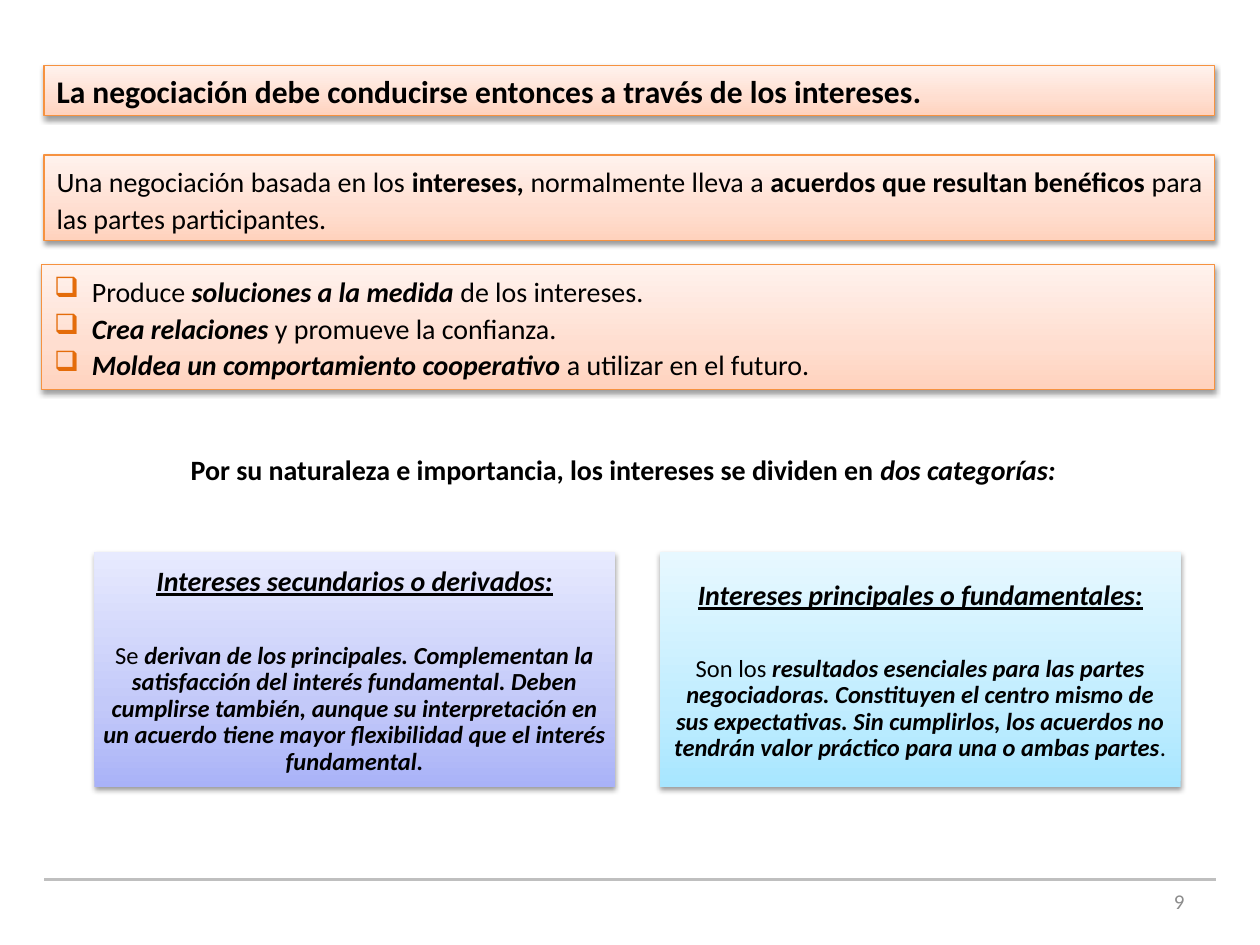
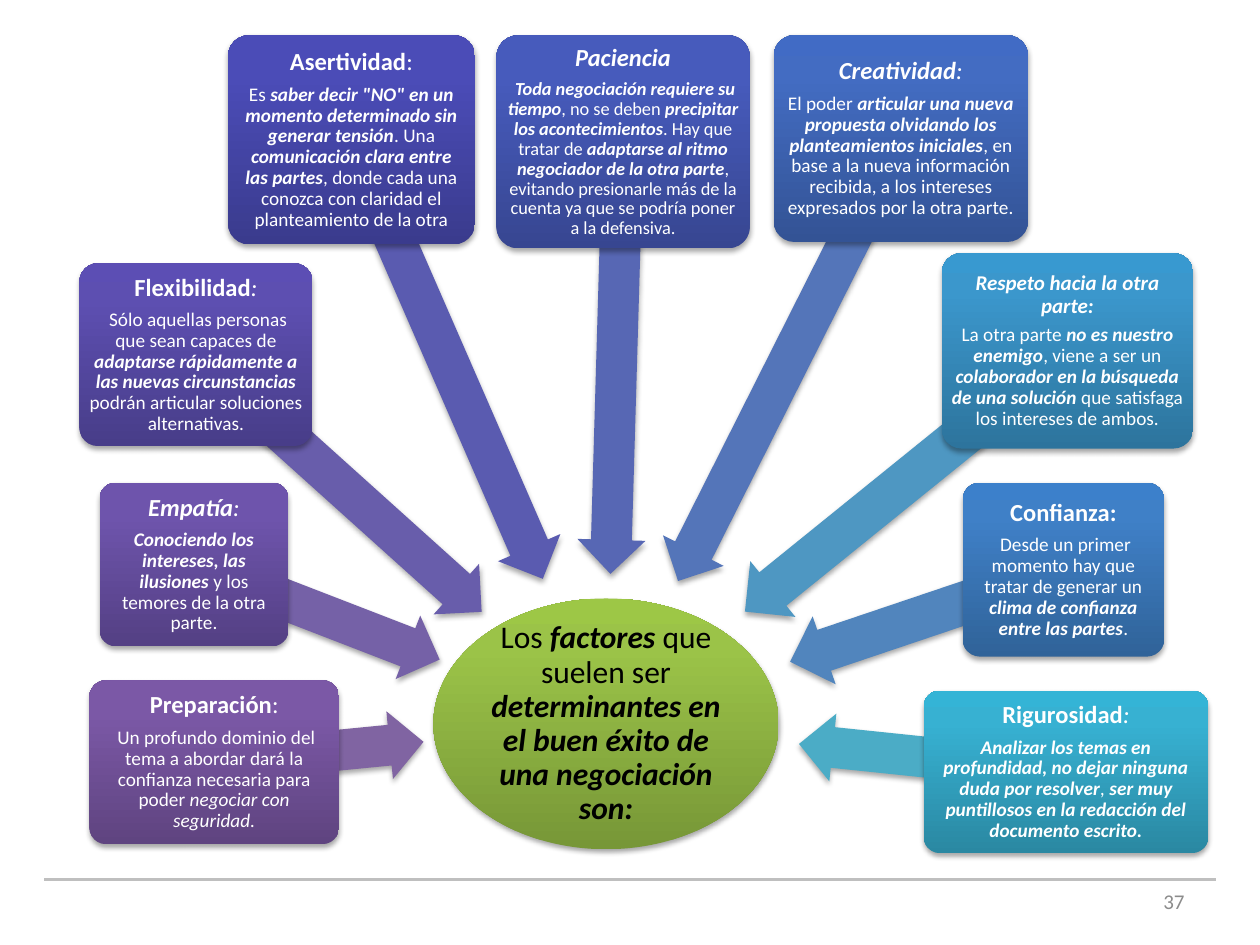
import math

import pptx
import pptx.dml.color
import pptx.enum.shapes
import pptx.enum.text
import pptx.oxml.ns
import pptx.util
from lxml import etree

Pt = pptx.util.Pt
SHAPES = pptx.enum.shapes.MSO_SHAPE
ALIGN = pptx.enum.text.PP_ALIGN
ANCHOR = pptx.enum.text.MSO_ANCHOR
qn = pptx.oxml.ns.qn

COLORS = {
    "text": "000000",
    "light text": "FFFFFF",
    "rule": "BFBFBF",
    "page number": "8C8C8C",
    "panel line": "F69240",
    "bullet": "E46C0A",
    "panel": "FFD2BD FFDED0 FFF2ED",
    "secondary": "A9B2F8 C3C9F9 E7EAFE",
    "principal": "A7E6FF C1EDFF E7F8FF",
    "hub": "779737 9BC348 9DC746",
    "preparation": "5F4480 7B58A6 7C57A8",
    "preparation arrow": "8064A2",
    "empathy": "544084 6E54AC 6D52AE",
    "empathy arrow": "7561A7",
    "flexibility": "483D89 5D4FB1 5C4EB4",
    "flexibility arrow": "685DAB",
    "assertiveness": "3A3B8D 4B4CB7 494BBA",
    "assertiveness arrow": "5A5BB0",
    "patience": "374691 475BBC 455ABF",
    "patience arrow": "5767B4",
    "creativity": "335395 436CC2 416BC5",
    "creativity arrow": "5475B9",
    "trust": "306399 3F80C7 3C80CB",
    "trust arrow": "5185BD",
    "respect": "2D749D 3B97CC 3899D0",
    "respect arrow": "4E97C2",
    "rigour": "2A88A2 37B1D2 34B4D6",
    "rigour arrow": "4BACC6",
}


class Painter:
    font = "Calibri"
    normal_margins = (7.2, 3.6)

    def __init__(self):
        self.deck = pptx.Presentation()
        self.deck.slide_width, self.deck.slide_height = Pt(720), Pt(540)
        self.page = None

    def color(self, name):
        return pptx.dml.color.RGBColor.from_string(COLORS[name])

    def new_page(self, number):
        self.page = self.deck.slides.add_slide(self.deck.slide_layouts[6])
        rule = self.page.shapes.add_connector(
            pptx.enum.shapes.MSO_CONNECTOR.STRAIGHT, Pt(25.2), Pt(502.6), Pt(694.8), Pt(502.6))
        rule.line.color.rgb = self.color("rule")
        rule.line.width = Pt(2)
        etree.SubElement(rule._element.spPr, qn("a:effectLst"))
        box = self.textbox((516.2, 500.4, 167.8, 28.8), anchor=ANCHOR.MIDDLE)
        self.paragraph(box, 12, [(number, "")], color="page number", align=ALIGN.RIGHT)

    def frame(self, box, margins, anchor):
        frame = box.text_frame
        frame.word_wrap = True
        frame.vertical_anchor = anchor
        frame.margin_left = frame.margin_right = Pt(margins[0])
        frame.margin_top = frame.margin_bottom = Pt(margins[1])

    def textbox(self, area, anchor=ANCHOR.TOP):
        box = self.page.shapes.add_textbox(*map(Pt, area))
        self.frame(box, self.normal_margins, anchor)
        return box

    def shape(self, kind, area, fill, middle_stop=80, shadow=(1.8, 35), line=None,
              margins=(2.3, 2.3), anchor=ANCHOR.MIDDLE):
        shape = self.page.shapes.add_shape(kind, *map(Pt, area))
        stops = COLORS[fill].split()
        if len(stops) == 1:
            shape.fill.solid()
            shape.fill.fore_color.rgb = self.color(fill)
        else:
            self.gradient(shape, stops, (0, middle_stop, 100))
        if line:
            shape.line.color.rgb = self.color(line)
            shape.line.width = Pt(0.75)
        else:
            shape.line.fill.background()
        self.shadow(shape, *shadow)
        self.frame(shape, margins, anchor)
        return shape

    def gradient(self, shape, stops, places):
        shape.fill.gradient()
        shape.fill.gradient_angle = 90
        stop_list = shape._element.spPr.find(".//" + qn("a:gsLst"))
        for stop in list(stop_list):
            stop_list.remove(stop)
        for value, place in zip(stops, places):
            stop = etree.SubElement(stop_list, qn("a:gs"), pos=str(place * 1000))
            etree.SubElement(stop, qn("a:srgbClr"), val=value)

    def shadow(self, shape, distance, opacity):
        shape.shadow.inherit = False
        effects = shape._element.spPr.find(qn("a:effectLst"))
        outer = etree.SubElement(effects, qn("a:outerShdw"), blurRad=str(Pt(3.1)),
                                 dist=str(Pt(distance)), dir="5400000", rotWithShape="0")
        tint = etree.SubElement(outer, qn("a:srgbClr"), val=COLORS["text"])
        etree.SubElement(tint, qn("a:alpha"), val=str(opacity * 1000))

    def paragraph(self, box, size, spans, color="text", align=ALIGN.CENTER,
                  spacing=None, after=None, bullet=None):
        frame = box.text_frame
        para = frame.paragraphs[0]
        if para.runs:
            para = frame.add_paragraph()
        para.alignment = align
        para.line_spacing = spacing
        if after:
            para.space_after = Pt(after)
        elif align == ALIGN.CENTER:
            self.relative_space_after(para)
        if bullet:
            self.bullet(para, bullet)
        for words, style in spans:
            span = para.add_run()
            span.text = words
            span.font.name = self.font
            span.font.size = Pt(size)
            span.font.color.rgb = self.color(color)
            span.font.bold = "b" in style
            span.font.italic = "i" in style
            span.font.underline = "u" in style

    def relative_space_after(self, para):
        para.space_after = Pt(0)
        space = para._p.pPr.find(qn("a:spcAft"))
        space.remove(space[0])
        etree.SubElement(space, qn("a:spcPct"), val="35000")

    def bullet(self, para, mark):
        properties = para._p.get_or_add_pPr()
        properties.set("marL", str(Pt(21.6)))
        properties.set("indent", str(-Pt(21.6)))
        tint = etree.SubElement(properties, qn("a:buClr"))
        etree.SubElement(tint, qn("a:srgbClr"), val=COLORS["bullet"])
        etree.SubElement(properties, qn("a:buChar"), char=mark)

    def panel(self, area, anchor=ANCHOR.TOP):
        return self.shape(SHAPES.RECTANGLE, area, "panel", 35, (1.6, 38), "panel line",
                          self.normal_margins, anchor)

    def card(self, left, fill, heading, spans):
        box = self.shape(SHAPES.RECTANGLE, (left, 315.4, 297.4, 134.6), fill, 35, (1.6, 38),
                         margins=(4.4, 4.4))
        self.paragraph(box, 16, [(heading, "biu")], after=26)
        self.paragraph(box, 14, spans, spacing=0.9)

    def arrow(self, area, hub, length, thickness, fill):
        left, top, width, height = area
        start_x, start_y = left + width / 2, top + height / 2
        angle = math.atan2(start_y - hub[1] - hub[3] / 2, start_x - hub[0] - hub[2] / 2)
        middle_x = start_x - length / 2 * math.cos(angle)
        middle_y = start_y - length / 2 * math.sin(angle)
        arrow = self.shape(SHAPES.LEFT_ARROW, (middle_x - length / 2, middle_y - thickness / 2,
                                               length, thickness), fill)
        arrow.adjustments[0], arrow.adjustments[1] = 0.6, 0.5
        arrow.rotation = math.degrees(angle) % 360

    def factor(self, area, fill, heading, spans, heading_size=14, body_size=11):
        box = self.shape(SHAPES.ROUNDED_RECTANGLE, area, fill)
        box.adjustments[0] = 0.1
        self.paragraph(box, heading_size, heading, "light text", spacing=0.9)
        self.paragraph(box, body_size, spans, "light text", spacing=0.9)


def interests_page(painter):
    painter.new_page("9")
    title = painter.panel((25.2, 37.4, 668.9, 28.8), ANCHOR.MIDDLE)
    painter.paragraph(title, 18, [
        ("La negociación debe conducirse entonces a través de los intereses", "b"),
        (".", "bi")], align=ALIGN.LEFT)
    lead = painter.panel((25.2, 88.6, 668.9, 49))
    painter.paragraph(lead, 16, [
        ("Una negociación basada en los ", ""), ("intereses,", "b"),
        (" normalmente lleva a ", ""), ("acuerdos que resultan benéficos", "b"),
        (" para las partes participantes.", "")], align=ALIGN.JUSTIFY, spacing=1.1)
    benefits = painter.panel((23.8, 151.2, 670.3, 71.3))
    for spans in (
        [("Produce ", ""), ("soluciones a la medida", "bi"), (" de los intereses.", "")],
        [("Crea relaciones", "bi"), (" y promueve la confianza.", "")],
        [("Moldea un comportamiento cooperativo", "bi"), (" a utilizar en el futuro.", "")],
    ):
        painter.paragraph(benefits, 16, spans, align=ALIGN.JUSTIFY, spacing=1.1, bullet="❑")
    division = painter.textbox((25.2, 254.9, 662, 26.6))
    painter.paragraph(division, 16, [
        ("Por su naturaleza e importancia, los intereses se dividen en ", "b"),
        ("dos categorías:", "bi")])
    painter.card(54, "secondary", "Intereses secundarios o derivados:", [
        ("Se ", ""),
        ("derivan de los principales. Complementan la satisfacción del interés fundamental. "
         "Deben cumplirse también, aunque su interpretación en un acuerdo tiene mayor "
         "flexibilidad que el interés fundamental.", "bi")])
    painter.card(377.3, "principal", "Intereses principales o fundamentales:", [
        ("Son los ", ""),
        ("resultados esenciales para las partes negociadoras. Constituyen el centro mismo de "
         "sus expectativas. Sin cumplirlos, los acuerdos no tendrán valor práctico para una o "
         "ambas partes", "bi"), (".", "i")])


def factors_page(painter):
    painter.new_page("37")
    hub = (247.7, 342, 197.3, 143.3)
    center = painter.shape(SHAPES.OVAL, hub, "hub", margins=(0.9, 0.9))
    painter.paragraph(center, 18, [
        ("Los ", ""), ("factores ", "bi"), ("que suelen ser ", ""),
        ("determinantes en el buen éxito de una negociación son:", "bi")], spacing=0.9)
    factors = [
        ("preparation", (51.1, 388.8, 142.6, 93.6), 120.2, 38.9,
         [("Preparación", "b"), (":", "")],
         [(" Un profundo dominio del tema a abordar dará la confianza necesaria para poder ", ""),
          ("negociar con seguridad.", "i")], {}),
        ("empathy", (56.9, 275.8, 108, 93.6), 150.5, 38.9,
         [("Empatía", "bi"), (":", "i")],
         [("Conociendo los intereses, las ilusiones", "bi"),
          (" y los temores de la otra parte.", "")], {}),
        ("flexibility", (45.4, 150.5, 133.2, 104.4), 219.6, 38.9,
         [("Flexibilidad", "b"), (":", "i")],
         [(" Sólo aquellas personas que sean capaces de ", ""),
          ("adaptarse rápidamente a las nuevas circunstancias", "bi"),
          (" podrán articular soluciones alternativas.", "")], {}),
        ("assertiveness", (130.3, 20.2, 141.1, 119.5), 273.6, 38.9,
         [("Asertividad", "b"), (":", "")],
         [("Es ", ""),
          ("saber decir \"NO\" en un momento determinado sin generar tensión", "bi"),
          (". Una ", ""), ("comunicación clara entre las partes", "bi"),
          (", donde cada una conozca con claridad el planteamiento de la otra", "")], {}),
        ("patience", (283.7, 20.2, 144.7, 121.7), 247, 38.9,
         [("Paciencia", "bi")],
         [(" Toda negociación requiere su tiempo", "bi"), (", no se deben ", ""),
          ("precipitar los acontecimientos", "bi"), (". Hay que tratar de ", ""),
          ("adaptarse al ritmo negociador de la otra parte", "bi"),
          (", evitando presionarle más de la cuenta ya que se podría poner a la defensiva.", "")],
         {"body_size": 10.5}),
        ("creativity", (442.1, 20.2, 145.4, 118.1), 283, 38.9,
         [("Creatividad", "bi"), (":", "i")],
         [("El poder ", ""),
          ("articular una nueva propuesta olvidando los planteamientos iniciales", "bi"),
          (", en base a la nueva información recibida, a los intereses expresados por la otra "
           "parte.", "")], {}),
        ("trust", (550.1, 275.8, 115.2, 99.4), 164.8, 41,
         [("Confianza:", "b")],
         [(" Desde un primer momento hay que tratar de generar un ", ""),
          ("clima de confianza entre las partes", "bi"), (".", "")], {}),
        ("respect", (538.2, 144.7, 143.6, 111.6), 237, 41,
         [("Respeto hacia la otra parte:", "bi")],
         [("La otra parte ", ""), ("no es nuestro enemigo", "bi"), (", viene a ser un ", ""),
          ("colaborador en la búsqueda de una solución", "bi"),
          (" que satisfaga los intereses de ambos.", "")], {"heading_size": 12}),
        ("rigour", (527.8, 394.6, 162.7, 92.9), 153.4, 38.9,
         [("Rigurosidad", "b"), (":", "i")],
         [("Analizar los temas en profundidad, no dejar ninguna duda por resolver", "bi"),
          (", ", "i"), ("ser muy puntillosos en la redacción del documento escrito.", "bi")], {}),
    ]
    for name, area, length, thickness, heading, spans, sizes in factors:
        painter.arrow(area, hub, length, thickness, name + " arrow")
        painter.factor(area, name, heading, spans, **sizes)


def main():
    painter = Painter()
    interests_page(painter)
    factors_page(painter)
    painter.deck.save("out.pptx")


if __name__ == "__main__":
    main()
